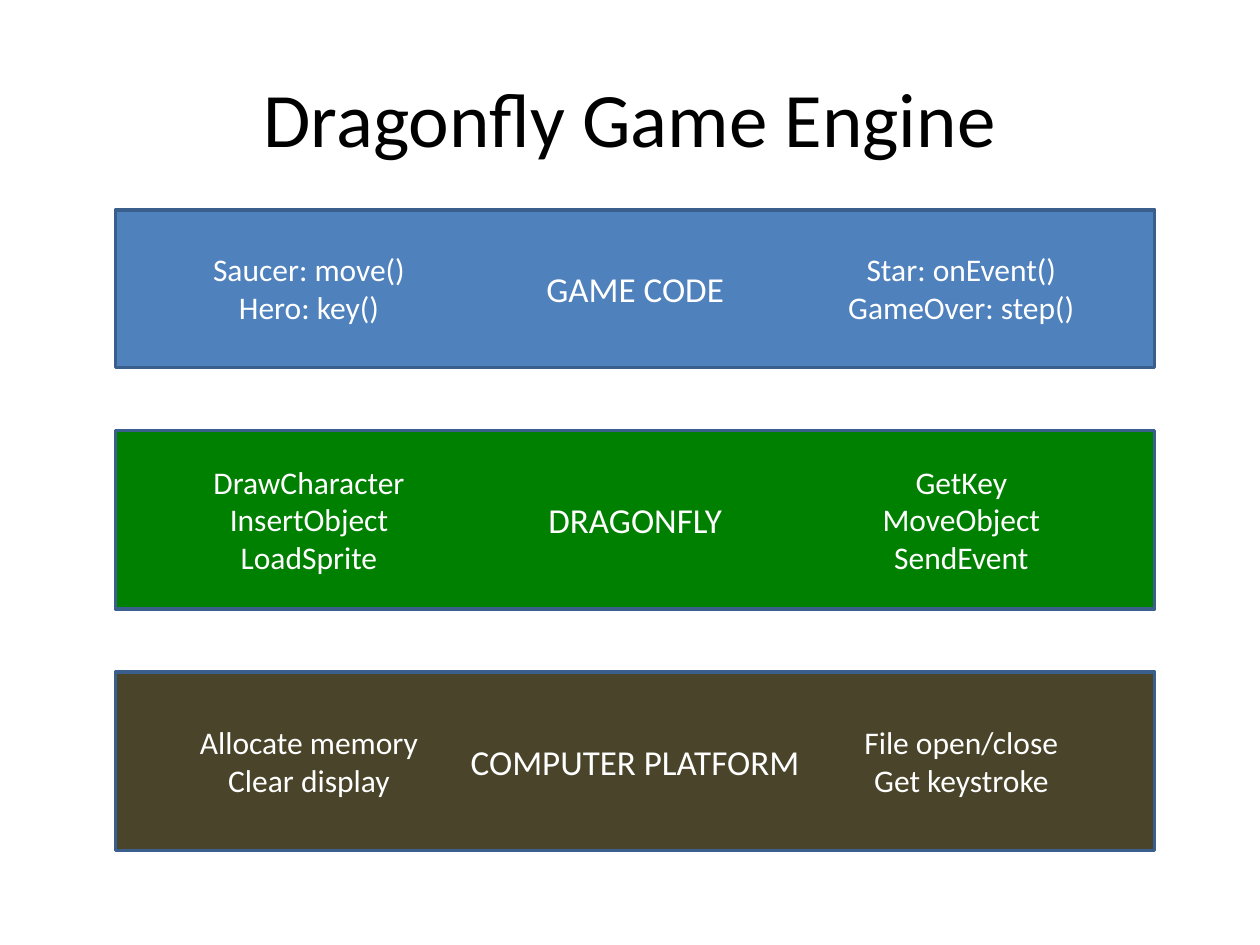
import pptx
import pptx.dml.color
import pptx.enum.shapes
import pptx.enum.text
import pptx.util

Cm = pptx.util.Cm
Pt = pptx.util.Pt
ALIGN = pptx.enum.text.PP_ALIGN
ANCHOR = pptx.enum.text.MSO_ANCHOR

FONT = "Calibri"
COLORS = {
    "title": "000000",
    "text": "FFFFFF",
    "border": "3A5F8C",
    "game": "4F81BD",
    "engine": "008000",
    "platform": "4A452A",
}
LEFT, TOP, WIDTH, GAP = 2.33, 4.23, 20.95, 1.27
LEFT_CENTER, RIGHT_CENTER = 3.9, 17.05
LINE_HEIGHT, PADDING = 0.76, 0.28

LAYERS = [
    ("GAME CODE", "game", 3.18,
     (4.42, "Saucer: move()\nHero: key()"),
     (5.13, "Star: onEvent()\nGameOver: step()")),
    ("DRAGONFLY", "engine", 3.6,
     (4.42, "DrawCharacter\nInsertObject\nLoadSprite"),
     (3.71, "GetKey\nMoveObject\nSendEvent")),
    ("COMPUTER PLATFORM", "platform", 3.6,
     (4.95, "Allocate memory\nClear display"),
     (4.47, "File open/close\nGet keystroke")),
]


def rgb(name):
    return pptx.dml.color.RGBColor.from_string(COLORS[name])


def set_text(tf, text, size, color):
    tf.text = text
    for p in tf.paragraphs:
        p.alignment = ALIGN.CENTER
        for r in p.runs:
            r.font.name = FONT
            r.font.size = Pt(size)
            r.font.color.rgb = rgb(color)


def add_title(slide, text, left, top, width, height):
    sp = slide.shapes.title
    sp.left, sp.top, sp.width, sp.height = map(Cm, (left, top, width, height))
    sp.text_frame.vertical_anchor = ANCHOR.MIDDLE
    set_text(sp.text_frame, text, 44, "title")


def add_calls(slide, text, center_x, center_y, width):
    height = LINE_HEIGHT * len(text.split("\n")) + PADDING
    sp = slide.shapes.add_textbox(Cm(center_x - width / 2), Cm(center_y - height / 2),
                                  Cm(width), Cm(height))
    tf = sp.text_frame
    tf.word_wrap = False
    tf.auto_size = pptx.enum.text.MSO_AUTO_SIZE.SHAPE_TO_FIT_TEXT
    set_text(tf, text, 18, "text")


def add_layer(slide, layer, left, top, width):
    name, color, height, left_calls, right_calls = layer
    sp = slide.shapes.add_shape(pptx.enum.shapes.MSO_SHAPE.RECTANGLE,
                                Cm(left), Cm(top), Cm(width), Cm(height))
    sp.shadow.inherit = False
    sp.fill.solid()
    sp.fill.fore_color.rgb = rgb(color)
    sp.line.color.rgb = rgb("border")
    sp.line.width = Pt(2)
    sp.text_frame.vertical_anchor = ANCHOR.MIDDLE
    set_text(sp.text_frame, name, 20, "text")
    for center, (calls_width, text) in ((LEFT_CENTER, left_calls), (RIGHT_CENTER, right_calls)):
        add_calls(slide, text, left + center, top + height / 2, calls_width)


def main():
    prs = pptx.Presentation()
    prs.slide_width, prs.slide_height = Cm(25.4), Cm(19.05)
    slide = prs.slides.add_slide(prs.slide_layouts[5])
    add_title(slide, "Dragonfly Game Engine", 1.27, 0.76, 22.86, 3.18)
    top = TOP
    for layer in LAYERS:
        add_layer(slide, layer, LEFT, top, WIDTH)
        top += layer[2] + GAP
    prs.save("out.pptx")


if __name__ == "__main__":
    main()
